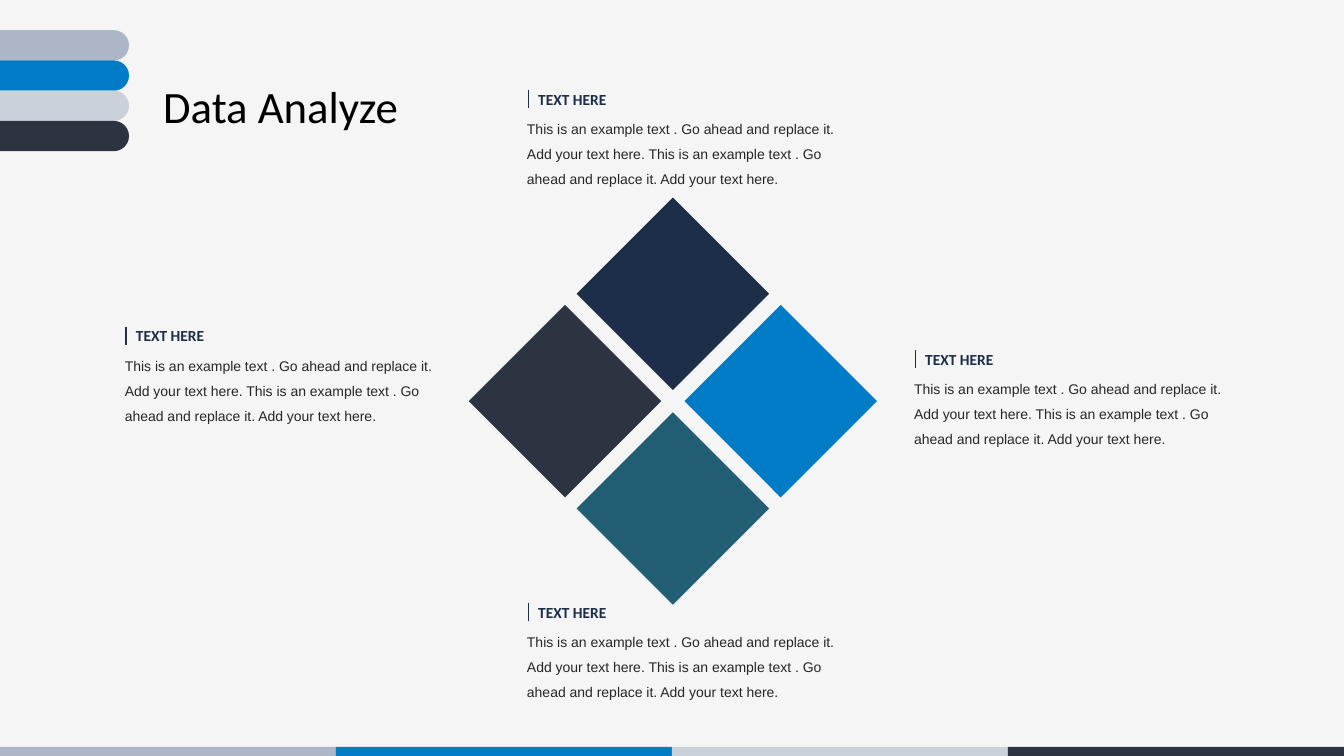
from lxml.etree import SubElement
from pptx import Presentation
from pptx.dml.color import RGBColor
from pptx.enum.shapes import MSO_CONNECTOR as Connector, MSO_SHAPE as Shape
from pptx.enum.text import MSO_AUTO_SIZE as AutoSize
from pptx.oxml.ns import qn
from pptx.util import Inches, Pt

COLORS = {
    "paper": "F5F5F5", "mist": "ADB6C7", "blue": "007BC6", "pale": "CBD1DB",
    "slate": "2C3441", "navy": "1C2E48", "teal": "225F74",
    "black": "000000", "body": "262626",
}
STRIPES = ("mist", "blue", "pale", "slate")
FORMATS = {
    "title": {"size": Pt(32), "name": "Calibri"},
    "label": {"size": Pt(11), "name": "Calibri", "bold": True},
    "body": {"size": Pt(10), "name": "Arial"},
}
DIAMONDS = (("navy", 0, -1), ("slate", -1, 0), ("teal", 0, 1), ("blue", 1, 0))
LABEL = "TEXT HERE"
BODY = ("This is an example text . Go ahead and replace it. Add your text here. "
        "This is an example text . Go ahead and replace it. Add your text here.")
CAPTIONS = ((1.14, 3.19), (8.97, 3.42), (5.13, 0.84), (5.13, 5.93))


def rgb(name):
    """Return the named palette colour."""
    return RGBColor.from_string(COLORS[name])


def add_solid(page, kind, box, color):
    """Add a borderless filled shape in the box."""
    shape = page.shapes.add_shape(kind, *map(Inches, box))
    shape.shadow.inherit = False
    shape.fill.solid()
    shape.fill.fore_color.rgb = rgb(color)
    shape.line.fill.background()
    return shape


def add_text(page, box, text, style, color, wrap=True, spacing=None):
    """Add a one-paragraph text box in the box."""
    frame = page.shapes.add_textbox(*map(Inches, box)).text_frame
    frame.word_wrap = wrap
    frame.auto_size = AutoSize.SHAPE_TO_FIT_TEXT
    para = frame.paragraphs[0]
    para.line_spacing = spacing
    span = para.add_run()
    span.text = text
    for attribute, value in FORMATS[style].items():
        setattr(span.font, attribute, value)
    span.font.color.rgb = rgb(color)


def add_footer(page, box):
    """Divide the box into equal coloured bars."""
    left, top, width, height = box
    step = width / len(STRIPES)
    for index, color in enumerate(STRIPES):
        add_solid(page, Shape.RECTANGLE, (left + index * step, top, step, height), color)


def add_tabs(page, box):
    """Stack rounded tabs down the box, each turned on its side."""
    left, top, width, height = box
    thick = height / len(STRIPES)
    for index, color in enumerate(STRIPES):
        middle = top + (index + 0.5) * thick
        upright = (left + (width - thick) / 2, middle - width / 2, thick, width)
        tab = add_solid(page, Shape.ROUNDED_RECTANGLE, upright, color)
        tab.adjustments[0] = 0.5
        tab.rotation = 90


def add_diamonds(page, box):
    """Place four diamonds against the sides of the box."""
    left, top, width, height = box
    size = 1.91
    reach_x, reach_y = (width - size) / 2, (height - size) / 2
    for color, across, down in DIAMONDS:
        place = (left + reach_x * (1 + across), top + reach_y * (1 + down), size, size)
        add_solid(page, Shape.DIAMOND, place, color)


def add_caption(page, box):
    """Place a label with its rule above body text in the box."""
    left, top, width, height = box
    edge = left + 0.11
    add_text(page, (left, top + 0.22, width, height - 0.22), BODY, "body", "body", spacing=1.5)
    add_text(page, (edge, top, 0.89, 0.29), LABEL, "label", "navy", wrap=False)
    ends = (edge, top + 0.05, edge, top + 0.23)
    rule = page.shapes.add_connector(Connector.STRAIGHT, *map(Inches, ends))
    rule.line.color.rgb = rgb("navy")
    rule.line.width = Pt(0.75)
    SubElement(rule._element.spPr, qn("a:effectLst"))


def main():
    """Build the slide and save the deck."""
    deck = Presentation()
    deck.slide_width, deck.slide_height = Inches(13.333), Inches(7.5)
    page = deck.slides.add_slide(deck.slide_layouts[6])
    page.background.fill.solid()
    page.background.fill.fore_color.rgb = rgb("paper")
    add_footer(page, (0, 7.41, 13.333, 0.12))
    add_tabs(page, (-0.62, 0.3, 1.9, 1.2))
    add_text(page, (1.52, 0.73, 2.95, 0.64), "Data Analyze", "title", "black")
    add_diamonds(page, (4.65, 1.96, 4.05, 4.04))
    for left, top in CAPTIONS:
        add_caption(page, (left, top, 3.33, 1.12))
    deck.save("out.pptx")


if __name__ == "__main__":
    main()
